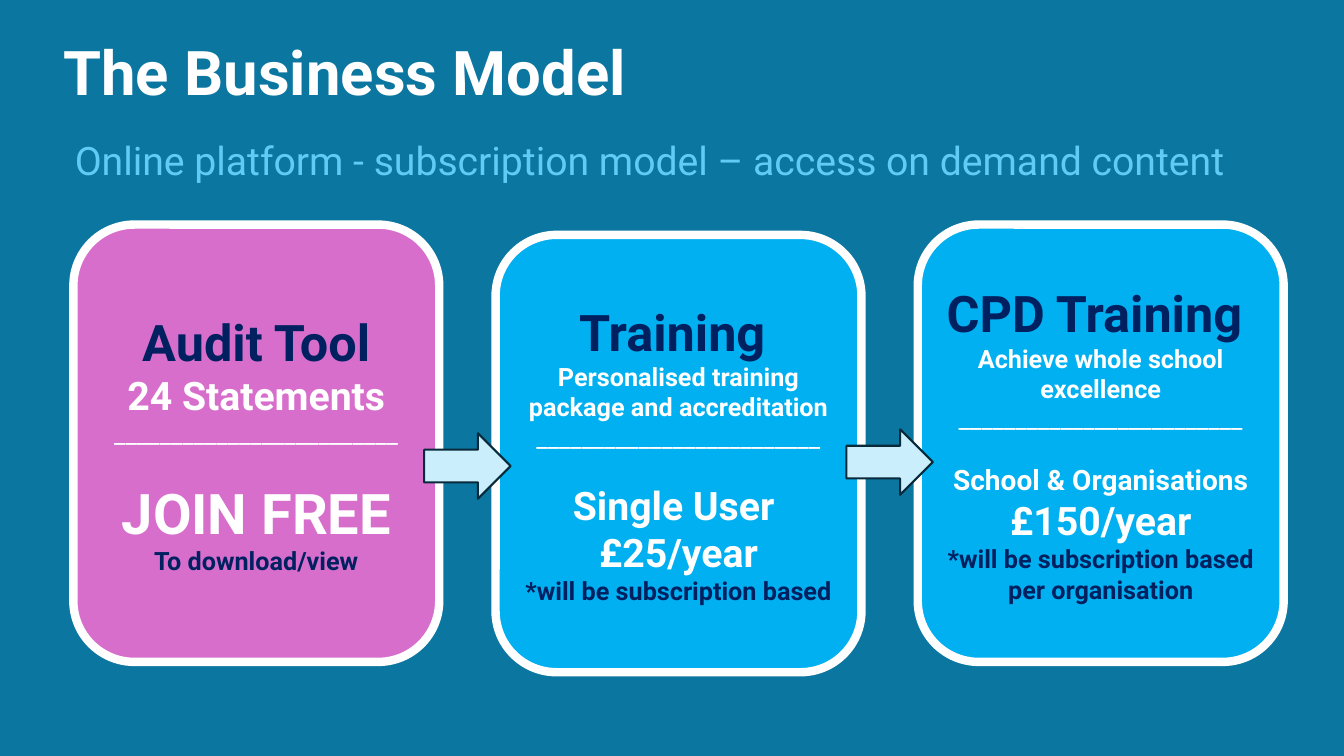
"""Build the business model slide."""
from dataclasses import dataclass

import lxml.etree
import pptx
import pptx.dml.color
import pptx.enum.shapes
import pptx.enum.text
import pptx.oxml.ns
import pptx.util

Cm = pptx.util.Cm
Pt = pptx.util.Pt
SHAPE = pptx.enum.shapes.MSO_SHAPE
ALIGN = pptx.enum.text.PP_ALIGN
ANCHOR = pptx.enum.text.MSO_ANCHOR


@dataclass(frozen=True)
class Theme:
    """Hold the font, colours and type sizes."""
    font: str = "Roboto"
    back: str = "0B76A0"
    white: str = "FFFFFF"
    navy: str = "002060"
    sky: str = "61CBF4"
    pink: str = "D86ECC"
    blue: str = "00B0F0"
    pale: str = "CAEEFB"
    dark: str = "092A39"
    title: int = 44
    join: int = 40
    head: int = 36
    lead: int = 28
    group: int = 20
    note: int = 18


THEME = Theme()
RULE = ("_" * 25, THEME.note, THEME.white, False)
GAP = Pt(21)
STEP = 10.64

CARDS = [
    (5.66, THEME.pink, [
        ("Audit Tool", THEME.head, THEME.navy, True),
        ("24 Statements", THEME.lead, THEME.white, True),
        RULE,
        ("JOIN FREE", THEME.join, THEME.white, True),
        ("To download/view", THEME.note, THEME.navy, True),
    ]),
    (5.92, THEME.blue, [
        ("Training ", THEME.head, THEME.navy, True),
        ("Personalised training package and accreditation",
         THEME.note, THEME.white, True),
        RULE,
        ("Single User ", THEME.lead, THEME.white, True),
        ("£25/year", THEME.lead, THEME.white, True),
        ("*will be subscription based", THEME.note, THEME.navy, True),
    ]),
    (5.66, THEME.blue, [
        ("CPD Training ", THEME.head, THEME.navy, True),
        ("Achieve whole school excellence", THEME.note, THEME.white, True),
        RULE,
        ("School & Organisations", THEME.group, THEME.white, True),
        ("£150/year", THEME.lead, THEME.white, True),
        ("*will be subscription based per organisation",
         THEME.note, THEME.navy, True),
    ]),
]
ARROWS = [10.92, 10.82]


def tint(code):
    """Turn a hex code into a colour."""
    return pptx.dml.color.RGBColor.from_string(code)


def style(para, size, color, bold, align):
    """Format a paragraph and its runs."""
    para.alignment = align
    para.space_before = Pt(0)
    for run in para.runs:
        run.font.name = THEME.font
        run.font.size = Pt(size)
        run.font.bold = bold
        run.font.color.rgb = tint(color)


def place(item, left, top, width, height):
    """Move a holder to its place on the slide."""
    item.left, item.top = Cm(left), Cm(top)
    item.width, item.height = Cm(width), Cm(height)
    frame = item.text_frame
    frame.auto_size = pptx.enum.text.MSO_AUTO_SIZE.NONE
    frame.vertical_anchor = ANCHOR.TOP
    return frame


def add_title(slide, text):
    """Fill the title holder."""
    frame = place(slide.shapes.title, 1.19, 0.74, 15.01, 2.13)
    frame.word_wrap = False
    frame.text = text
    style(frame.paragraphs[0], THEME.title, THEME.white, True, ALIGN.CENTER)


def add_lead(slide, text):
    """Fill the body holder with the plain lead line."""
    frame = place(slide.placeholders[1], 1.63, 3.3, 29.92, 1.45)
    frame.word_wrap = True
    frame.text = text
    para = frame.paragraphs[0]
    props = para._p.get_or_add_pPr()
    props.set("marL", "0")
    props.set("indent", "0")
    lxml.etree.SubElement(props, pptx.oxml.ns.qn("a:buNone"))
    style(para, THEME.lead, THEME.sky, False, ALIGN.LEFT)


def add_form(slide, kind, box, fill, line, weight):
    """Draw a flat shape with a fill and an outline."""
    form = slide.shapes.add_shape(kind, *map(Cm, box))
    form.shadow.inherit = False
    form.fill.solid()
    form.fill.fore_color.rgb = tint(fill)
    form.line.color.rgb = tint(line)
    form.line.width = Pt(weight)
    return form


def add_card(slide, left, top, fill, lines):
    """Draw a card and its lines of text."""
    card = add_form(slide, SHAPE.FLOWCHART_ALTERNATE_PROCESS,
                    (left, top, 9.22, 11.02), fill, THEME.white, 6)
    frame = card.text_frame
    frame.word_wrap = True
    frame.vertical_anchor = ANCHOR.MIDDLE
    frame.text = "\n".join(line[0] for line in lines)
    for para, (_, size, color, bold) in zip(frame.paragraphs, lines):
        style(para, size, color, bold, ALIGN.CENTER)
    frame.paragraphs[lines.index(RULE) + 1].space_before = GAP


def main():
    """Build and save the slide."""
    deck = pptx.Presentation()
    deck.slide_width, deck.slide_height = Cm(33.87), Cm(19.05)
    slide = deck.slides.add_slide(deck.slide_layouts[1])
    slide.background.fill.solid()
    slide.background.fill.fore_color.rgb = tint(THEME.back)
    add_title(slide, "The Business Model")
    add_lead(slide, "Online platform - subscription model – "
                    "access on demand content")
    for index, (top, fill, lines) in enumerate(CARDS):
        add_card(slide, 1.85 + index * STEP, top, fill, lines)
    for index, top in enumerate(ARROWS):
        add_form(slide, SHAPE.RIGHT_ARROW,
                 (10.69 + index * STEP, top, 2.18, 1.65),
                 THEME.pale, THEME.dark, 1.5)
    deck.save("out.pptx")


if __name__ == "__main__":
    main()
